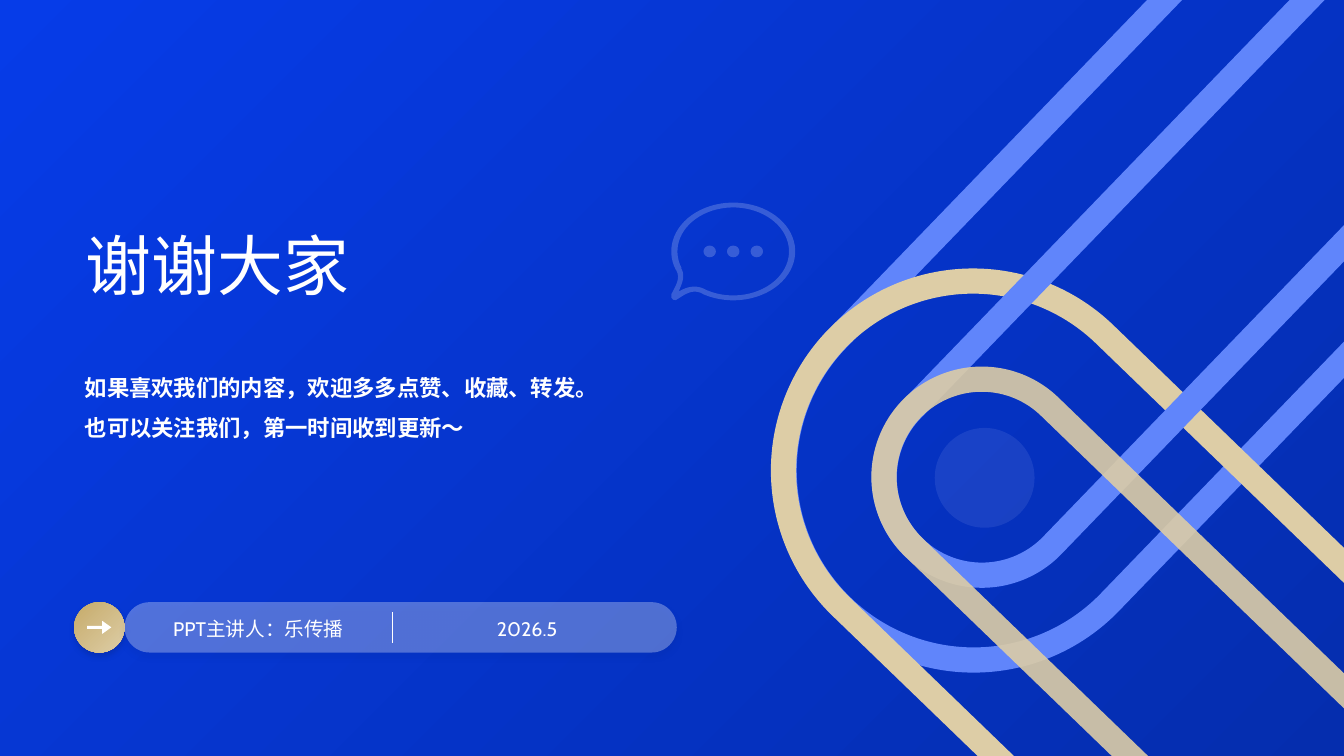
import math

from lxml import etree
from pptx import Presentation
from pptx.dml.color import RGBColor
from pptx.enum.shapes import MSO_CONNECTOR, MSO_SHAPE
from pptx.enum.text import MSO_ANCHOR, PP_ALIGN
from pptx.oxml.ns import qn
from pptx.util import Emu, Pt

CELL = 76200
COLUMNS, ROWS = 160, 90
RECTANGLE, OVAL = MSO_SHAPE.RECTANGLE, MSO_SHAPE.OVAL
PILL, ARROW = MSO_SHAPE.ROUNDED_RECTANGLE, MSO_SHAPE.RIGHT_ARROW
LOOP = MSO_SHAPE.ROUND_2_SAME_RECTANGLE
STRAIGHT = MSO_CONNECTOR.STRAIGHT
TOP, MIDDLE = MSO_ANCHOR.TOP, MSO_ANCHOR.MIDDLE
LEFT, CENTER = PP_ALIGN.LEFT, PP_ALIGN.CENTER

WHITE = RGBColor(0xFF, 0xFF, 0xFF)
BRIGHT_BLUE = RGBColor(0x06, 0x3C, 0xE8)
DEEP_BLUE = RGBColor(0x05, 0x2D, 0xAE)
SKY = RGBColor(0x60, 0x85, 0xFB)
PALE_SKY = RGBColor(0xCA, 0xD6, 0xFE)
GOLD = RGBColor(0xC6, 0xAB, 0x6A)
SAND = RGBColor(0xDD, 0xCD, 0xA6)
SHADE = RGBColor(0x03, 0x1E, 0x74)
LATIN_FONT, CHINESE_FONT = "Cabin", "Noto Sans CJK SC"


def cells(*lengths):
    return [Emu(round(length * CELL)) for length in lengths]


def within(box, left, top, width, height):
    return cells(box[0] + left, box[1] + top, width, height)


def set_opacity(color_parent, percent):
    color = next(color_parent.iter(qn("a:srgbClr")))
    etree.SubElement(color, qn("a:alpha"), val=str(percent * 1000))


def paint(shape, color, opacity=100):
    shape.shadow.inherit = False
    shape.line.fill.background()
    shape.fill.solid()
    shape.fill.fore_color.rgb = color
    if opacity < 100:
        set_opacity(shape._element.spPr.find(qn("a:solidFill")), opacity)


def paint_gradient(shape, *colors):
    shape.shadow.inherit = False
    shape.line.fill.background()
    shape.fill.gradient()
    shape.fill.gradient_angle = 315
    for stop, color in zip(shape.fill.gradient_stops, colors):
        stop.color.rgb = color


def drop_shadow(shape):
    effects = shape._element.spPr.find(qn("a:effectLst"))
    shadow = etree.SubElement(
        effects, qn("a:outerShdw"), blurRad=str(Pt(4)), dist=str(Pt(3)),
        dir="5400000", algn="t", rotWithShape="0")
    etree.SubElement(shadow, qn("a:srgbClr"), val=str(SHADE))
    set_opacity(shadow, 25)


def add_text(slide, place, words, size, font=LATIN_FONT, bold=False,
             align=LEFT, anchor=MIDDLE, spacing=1.1):
    frame = slide.shapes.add_textbox(*place).text_frame
    frame.word_wrap = True
    frame.vertical_anchor = anchor
    frame.margin_left = frame.margin_right = 0
    frame.margin_top = frame.margin_bottom = 0
    paragraph = frame.paragraphs[0]
    paragraph.alignment = align
    paragraph.line_spacing = spacing
    run = paragraph.add_run()
    run.text = words
    run.font.size = Pt(size)
    run.font.name = font
    run.font.bold = bold
    run.font.color.rgb = WHITE
    etree.SubElement(run.font._element, qn("a:ea"), typeface=CHINESE_FONT)


def draw_backdrop(slide, box):
    backdrop = slide.shapes.add_shape(RECTANGLE, *cells(*box))
    paint_gradient(backdrop, BRIGHT_BLUE, DEEP_BLUE)


def draw_loops(slide, box):
    loops = [
        (27.48, -26.28, 45.12, 114.6, 224, SKY, 100),
        (20.76, 26.04, 45.12, 93.72, 314, SAND, 100),
        (36.48, -7.32, 23.28, 84.36, 224, SKY, 100),
        (31.68, 38.16, 23.28, 69, 314, SAND, 90),
    ]
    for left, top, width, height, turn, color, opacity in loops:
        loop = slide.shapes.add_shape(LOOP, *within(box, left, top, width, height))
        loop.adjustments[0], loop.adjustments[1] = 0.5, 0
        loop.rotation = turn
        loop.shadow.inherit = False
        loop.fill.background()
        loop.line.color.rgb = color
        loop.line.width = Pt(18)
        if opacity < 100:
            set_opacity(loop.line._ln, opacity)
    core = slide.shapes.add_shape(OVAL, *within(box, 21.28, 50.95, 11.88, 11.88))
    paint(core, PALE_SKY, 10)


def draw_presenter_bar(slide, box):
    height = box[3]
    badge = slide.shapes.add_shape(OVAL, *within(box, 0, 0, height, height))
    paint_gradient(badge, GOLD, SAND)
    drop_shadow(badge)
    arrow = slide.shapes.add_shape(ARROW, *within(box, 1.56, 2.22, 2.88, 1.56))
    arrow.adjustments[0], arrow.adjustments[1] = 0.24, 0.7
    paint(arrow, WHITE)
    pill = slide.shapes.add_shape(PILL, *within(box, 6, 0, box[2] - 6, height))
    pill.adjustments[0] = 0.5
    paint(pill, WHITE, 30)
    drop_shadow(pill)
    for left, words in [(9.54, "PPT主讲人：乐传播"), (41.5, "2026.5")]:
        add_text(slide, within(box, left, 0.96, 24.84, 4.08), words, 14, align=CENTER)
    x, top, bottom = cells(box[0] + 37.92, box[1] + 1.2, box[1] + 4.8)
    divider = slide.shapes.add_connector(STRAIGHT, x, top, x, bottom)
    divider.line.color.rgb = WHITE
    divider.line.width = Pt(1)
    etree.SubElement(divider._element.spPr, qn("a:effectLst"))


def arc(center_x, radius_x, radius_y, start, sweep):
    step = math.radians(sweep / 4)
    pull = 4 / 3 * math.tan(step / 4)

    def spot(turn, lean):
        angle = math.radians(start) + turn * step
        return (center_x + radius_x * (math.cos(angle) - lean * math.sin(angle)),
                0.5 + radius_y * (math.sin(angle) + lean * math.cos(angle)))

    points = [spot(0, 0)]
    for turn in range(4):
        points += [spot(turn, pull), spot(turn + 1, -pull), spot(turn + 1, 0)]
    return points


def draw_speech_bubble(slide, box):
    outer_tail = [(0.19, 0.88), (0.13, 0.92), (0.06, 0.98),
                  (0.03, 1.02), (-0.01, 0.99), (0, 0.94),
                  (0.03, 0.86), (0.08, 0.78), (0.04, 0.69)]
    inner_tail = [(0.21, 0.84), (0.14, 0.85), (0.06, 0.91),
                  (0.08, 0.84), (0.12, 0.76), (0.08, 0.67)]
    contours = [arc(0.5, 0.5, 0.5, 158, 320) + outer_tail,
                arc(0.5, 0.45, 0.45, 158, 320) + inner_tail]
    contours += [arc(center, 0.05, 0.06, 0, 360) for center in (0.31, 0.5, 0.69)]

    left, top, width, height = cells(*box)
    builder = slide.shapes.build_freeform(left, top)
    builder.add_line_segments([(left + width, top + height)])
    bubble = builder.convert_to_shape()
    outline = next(bubble._element.iter(qn("a:path")))
    for segment in list(outline):
        outline.remove(segment)

    def add_segment(kind, points):
        segment = etree.SubElement(outline, qn(kind))
        for x, y in points:
            etree.SubElement(segment, qn("a:pt"),
                             x=str(round(x * width)), y=str(round(y * height)))

    for contour in contours:
        add_segment("a:moveTo", contour[:1])
        for first in range(1, len(contour), 3):
            add_segment("a:cubicBezTo", contour[first:first + 3])
        add_segment("a:close", [])
    paint(bubble, WHITE, 20)


def draw_closing_words(slide, box):
    add_text(slide, within(box, 0.12, 0, box[2], 35.28), "谢谢大家", 47)
    add_text(slide, within(box, 0, 29.57, 62.52, 13.92),
             "如果喜欢我们的内容，欢迎多多点赞、收藏、转发。也可以关注我们，第一时间收到更新～",
             16, CHINESE_FONT, True, anchor=TOP, spacing=1.5)


def main():
    deck = Presentation()
    deck.slide_width, deck.slide_height = cells(COLUMNS, ROWS)
    slide = deck.slides.add_slide(deck.slide_layouts[6])
    draw_backdrop(slide, (0, 0, COLUMNS, ROWS))
    draw_loops(slide, (90, 0, 70, ROWS))
    draw_presenter_bar(slide, (8.82, 71.69, 71.75, 6))
    draw_speech_bubble(slide, (79.92, 24.12, 14.76, 11.64))
    draw_closing_words(slide, (10.08, 13.32, 77.28, 43.44))
    deck.save("out.pptx")


if __name__ == "__main__":
    main()
